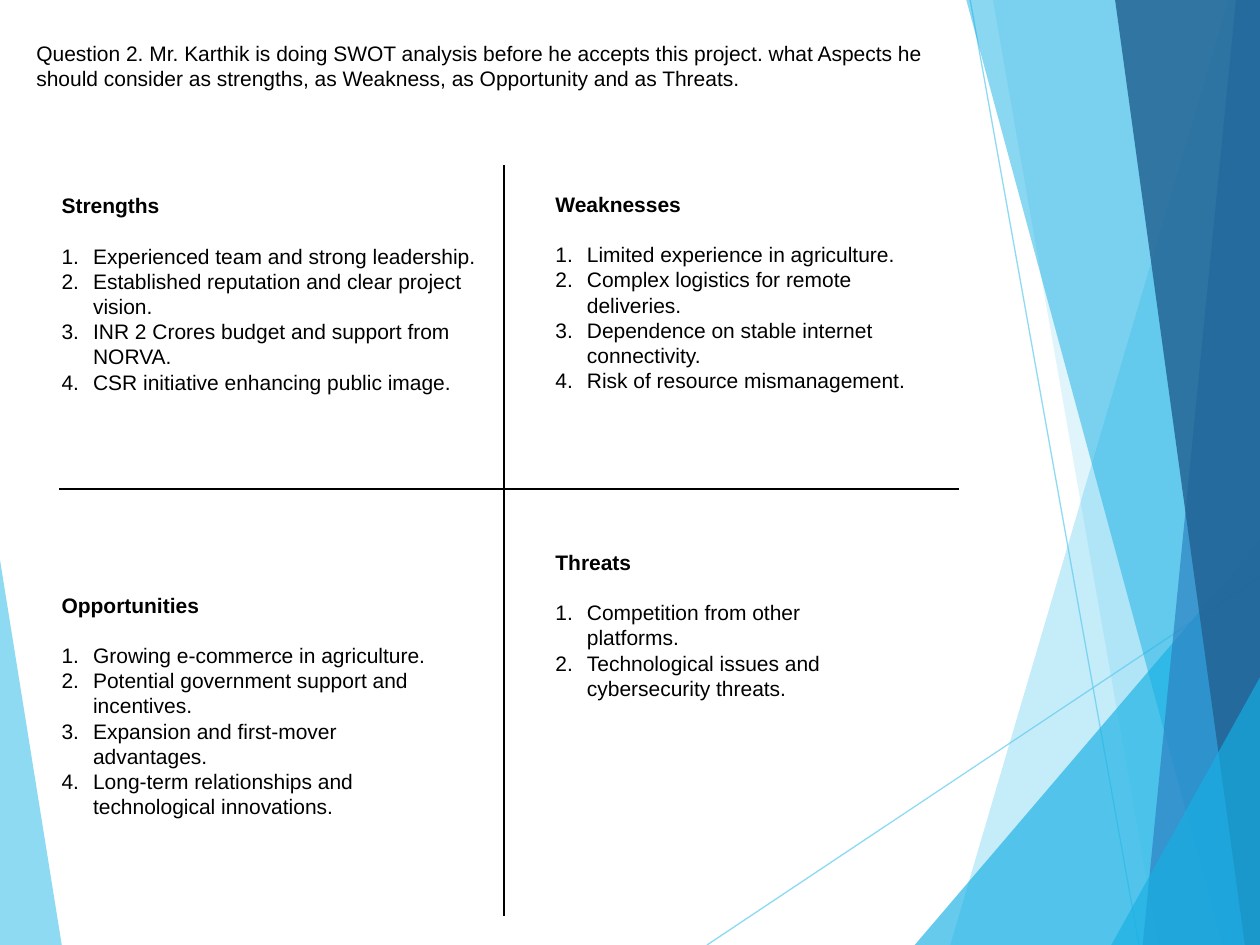
"""Build a SWOT analysis slide with four quadrants and a faceted blue border."""
from lxml.etree import SubElement
from pptx import Presentation
from pptx.dml.color import RGBColor
from pptx.enum.shapes import MSO_CONNECTOR
from pptx.oxml.ns import qn
from pptx.util import Pt

WIDTH, HEIGHT = 720, 540
FONT, SIZE, LINE_HEIGHT, INDENT = "Arial", 12, 14.4, 18
BLACK, SKY, CYAN, BLUE, NAVY = "000000", "5FCBEF", "17B0E4", "2E83C3", "226292"

LEFT_FACET = ([(0, 320), (35.3, HEIGHT), (0, HEIGHT)], SKY, 70)
RIGHT_FACETS = [
    ([(702, 0), (543, HEIGHT), (WIDTH, HEIGHT), (WIDTH, 0)], SKY, 36),
    ([(567.4, 0), (661.7, HEIGHT), (WIDTH, HEIGHT), (WIDTH, 0)], SKY, 20),
    ([(522.7, HEIGHT), (WIDTH, 309), (WIDTH, HEIGHT)], CYAN, 66),
    ([(552.2, 0), (698.4, HEIGHT), (WIDTH, HEIGHT), (WIDTH, 0)], CYAN, 50),
    ([(706.3, 0), (653, HEIGHT), (WIDTH, HEIGHT), (WIDTH, 0)], BLUE, 70),
    ([(637.2, 0), (711.4, HEIGHT), (WIDTH, HEIGHT), (WIDTH, 0)], NAVY, 82),
    ([(635, HEIGHT), (WIDTH, 387), (WIDTH, HEIGHT)], CYAN, 66),
]
ACCENT_LINES = [(404, HEIGHT, WIDTH, 329.4), (554.4, 0, 650.9, HEIGHT)]
AXES = [(33.8, 279.4, 547.9, 279.4), (288, 523.4, 288, 94.3)]

QUESTION = (
    "Question 2. Mr. Karthik is doing SWOT analysis before he accepts this project. "
    "what Aspects he should consider as strengths, as Weakness, as Opportunity and as Threats."
)
QUADRANTS = [
    ("Strengths", (28.1, 106.6, 255.6, 152.6), [
        "Experienced team and strong leadership.",
        "Established reputation and clear project vision.",
        "INR 2 Crores budget and support from NORVA.",
        "CSR initiative enhancing public image.",
    ]),
    ("Weaknesses", (310.3, 105.8, 216, 123.8), [
        "Limited experience in agriculture.",
        "Complex logistics for remote deliveries.",
        "Dependence on stable internet connectivity.",
        "Risk of resource mismanagement.",
    ]),
    ("Opportunities", (28.1, 334.8, 231.8, 138.2), [
        "Growing e-commerce in agriculture.",
        "Potential government support and incentives.",
        "Expansion and first-mover advantages.",
        "Long-term relationships and technological innovations.",
    ]),
    ("Threats", (310.3, 310.3, 190.8, 94.3), [
        "Competition from other platforms.",
        "Technological issues and cybersecurity threats.",
    ]),
]


def color(hex_string):
    return RGBColor.from_string(hex_string)


def set_opacity(format_element, percent):
    for color_element in format_element.iter(qn("a:srgbClr")):
        SubElement(color_element, qn("a:alpha"), val=str(percent * 1000))


def add_facet(slide, points, fill, opacity):
    builder = slide.shapes.build_freeform(Pt(points[0][0]), Pt(points[0][1]))
    builder.add_line_segments([(Pt(x), Pt(y)) for x, y in points[1:]], close=True)
    shape = builder.convert_to_shape()
    shape.shadow.inherit = False
    shape.fill.solid()
    shape.fill.fore_color.rgb = color(fill)
    shape.line.fill.background()
    set_opacity(shape.element.spPr, opacity)


def add_line(slide, ends, stroke, width, opacity=100):
    connector = slide.shapes.add_connector(MSO_CONNECTOR.STRAIGHT, *map(Pt, ends))
    connector.line.color.rgb = color(stroke)
    connector.line.width = Pt(width)
    properties = connector.element.spPr
    if opacity < 100:
        set_opacity(properties, opacity)
    SubElement(properties, qn("a:effectLst"))


def add_text_frame(slide, box):
    frame = slide.shapes.add_textbox(*map(Pt, box)).text_frame
    frame.word_wrap = True
    return frame


def write(paragraph, text, bold=False, numbered=False, space_after=0):
    run = paragraph.add_run()
    run.text = text
    run.font.name = FONT
    run.font.size = Pt(SIZE)
    run.font.bold = bold
    run.font.color.rgb = color(BLACK)
    paragraph.line_spacing = Pt(LINE_HEIGHT)
    paragraph.space_after = Pt(space_after)
    if numbered:
        properties = paragraph._p.get_or_add_pPr()
        properties.set("marL", str(Pt(INDENT)))
        properties.set("indent", str(-Pt(INDENT)))
        SubElement(properties, qn("a:buFont"), typeface=FONT)
        SubElement(properties, qn("a:buAutoNum"), type="arabicPeriod")


def main():
    presentation = Presentation()
    presentation.slide_width, presentation.slide_height = Pt(WIDTH), Pt(HEIGHT)
    slide = presentation.slides.add_slide(presentation.slide_layouts[6])

    add_facet(slide, *LEFT_FACET)
    for ends in ACCENT_LINES:
        add_line(slide, ends, SKY, 0.75, opacity=70)
    for facet in RIGHT_FACETS:
        add_facet(slide, *facet)

    write(add_text_frame(slide, (13.7, 19.4, 543.6, 65.5)).paragraphs[0], QUESTION)
    for ends in AXES:
        add_line(slide, ends, BLACK, 1)
    for heading, box, items in QUADRANTS:
        frame = add_text_frame(slide, box)
        write(frame.paragraphs[0], heading, bold=True, space_after=LINE_HEIGHT)
        for item in items:
            write(frame.add_paragraph(), item, numbered=True)

    presentation.save("out.pptx")


if __name__ == "__main__":
    main()
